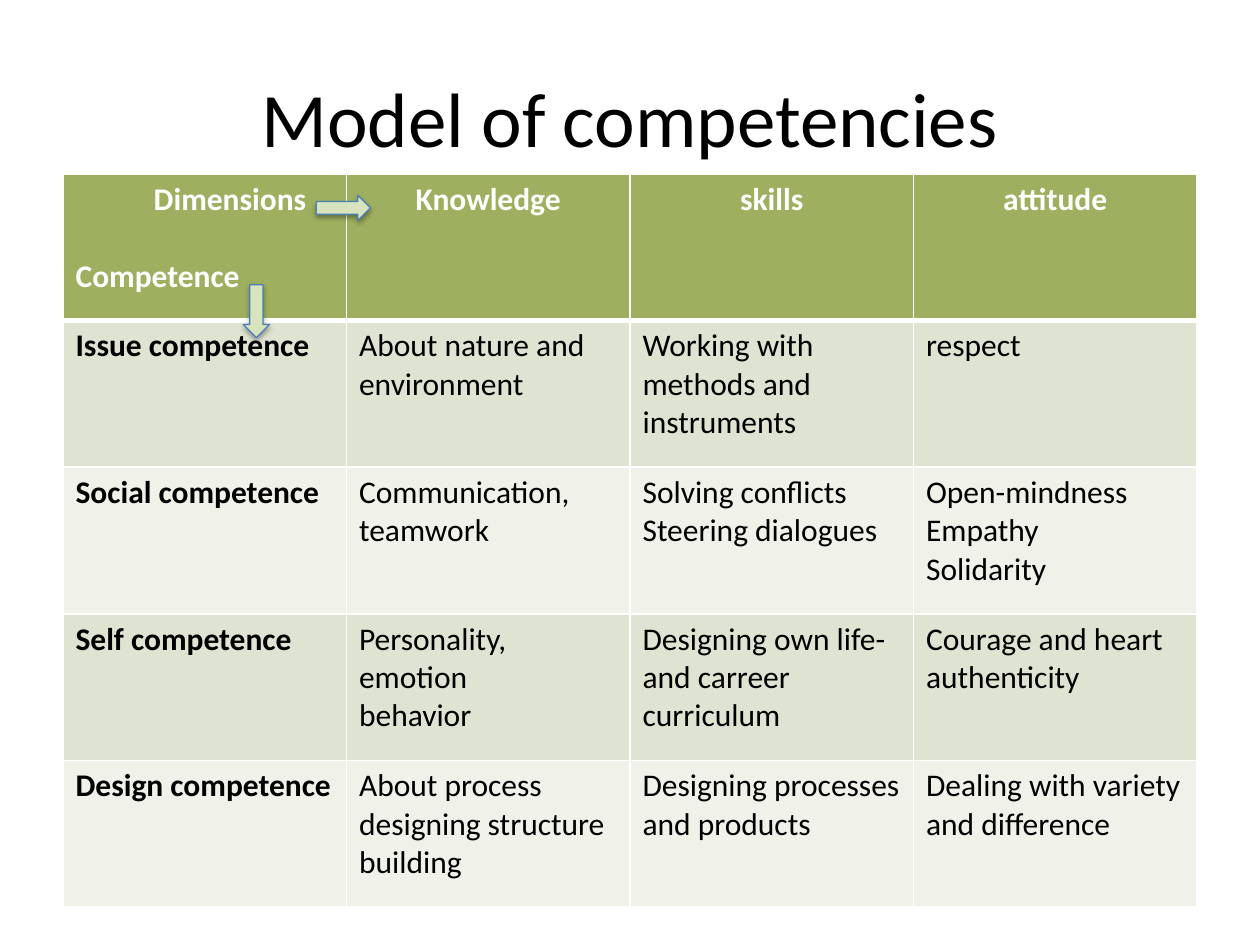
from lxml import etree
from pptx import Presentation
from pptx.dml.color import RGBColor
from pptx.enum import shapes, text
from pptx.oxml import ns
from pptx.util import Inches, Pt

FONT = "Calibri"
BLACK = RGBColor(0x00, 0x00, 0x00)
WHITE = RGBColor(0xFF, 0xFF, 0xFF)
HEADER_GREEN = RGBColor(0x9E, 0xB0, 0x60)
BAND_DARK = RGBColor(0xDF, 0xE4, 0xD2)
BAND_LIGHT = RGBColor(0xF0, 0xF2, 0xEA)
ARROW_FILL = RGBColor(0xD7, 0xE4, 0xBD)
ARROW_LINE = RGBColor(0x4B, 0x7E, 0xBC)

ROWS = [
    ["Dimensions\nCompetence", "Knowledge", "skills", "attitude"],
    ["Issue competence", "About nature and environment",
     "Working with methods and instruments", "respect"],
    ["Social competence", "Communication, teamwork",
     "Solving conflicts\nSteering dialogues",
     "Open-mindness\nEmpathy\nSolidarity"],
    ["Self competence", "Personality, emotion\nbehavior",
     "Designing own life- and carreer curriculum",
     "Courage and heart\nauthenticity"],
    ["Design competence", "About process designing structure building",
     "Designing processes and products",
     "Dealing with variety and difference"],
]


def add_node(parent, tag, **attributes):
    values = {name: str(value) for name, value in attributes.items()}
    return etree.SubElement(parent, ns.qn(tag), values)


def style_paragraph(para, size, color, bold=False, align=text.PP_ALIGN.LEFT):
    para.alignment = align
    para.font.name = FONT
    para.font.size = Pt(size)
    para.font.bold = bold
    para.font.color.rgb = color


def set_borders(cell, widths):
    properties = cell._tc.get_or_add_tcPr()
    for side, width in zip("LRTB", widths):
        line = add_node(properties, f"a:ln{side}", w=Pt(width))
        fill = add_node(line, "a:solidFill")
        add_node(fill, "a:srgbClr", val=WHITE)


def add_title(page, left, top, width, height):
    box = page.shapes.add_textbox(left, top, width, height)
    frame = box.text_frame
    frame.word_wrap = True
    frame.vertical_anchor = text.MSO_ANCHOR.MIDDLE
    frame.text = "Model of competencies"
    style_paragraph(frame.paragraphs[0], 44, BLACK, align=text.PP_ALIGN.CENTER)


def fill_cell(cell, wording, row, column):
    header = row == 0
    set_borders(cell, (1, 1, 3 if row == 1 else 1, 3 if header else 1))
    cell.fill.solid()
    band = BAND_DARK if row % 2 else BAND_LIGHT
    cell.fill.fore_color.rgb = HEADER_GREEN if header else band
    cell.text = wording
    centred = header and column > 0
    align = text.PP_ALIGN.CENTER if centred else text.PP_ALIGN.LEFT
    for para in cell.text_frame.paragraphs:
        style_paragraph(para, 18, WHITE if header else BLACK,
                        header or column == 0, align)


def add_competence_table(page, left, top, width, height):
    frame = page.shapes.add_table(len(ROWS), len(ROWS[0]),
                                  left, top, width, height)
    table = frame.table
    for row, wordings in enumerate(ROWS):
        for column, wording in enumerate(wordings):
            fill_cell(table.cell(row, column), wording, row, column)
    dimensions, competence = table.cell(0, 0).text_frame.paragraphs
    dimensions._p.get_or_add_pPr().set("marL", str(Inches(0.62)))
    competence.space_before = Pt(22)

    add_arrow(page, shapes.MSO_SHAPE.RIGHT_ARROW, left + Inches(2.01),
              top + Inches(0.17), Inches(0.43), Inches(0.2))
    add_arrow(page, shapes.MSO_SHAPE.DOWN_ARROW, left + Inches(1.43),
              top + Inches(0.88), Inches(0.21), Inches(0.42))


def add_arrow(page, kind, left, top, width, height):
    arrow = page.shapes.add_shape(kind, left, top, width, height)
    arrow.fill.solid()
    arrow.fill.fore_color.rgb = ARROW_FILL
    arrow.line.color.rgb = ARROW_LINE
    arrow.line.width = Pt(0.75)
    arrow.shadow.inherit = False
    effects = arrow._element.spPr.find(ns.qn("a:effectLst"))
    shadow = add_node(effects, "a:outerShdw", blurRad=Pt(3.1), dist=Pt(1.8),
                      dir=90 * 60000, rotWithShape=0)
    color = add_node(shadow, "a:srgbClr", val=BLACK)
    add_node(color, "a:alpha", val=35000)


def main():
    deck = Presentation()
    deck.slide_width, deck.slide_height = Inches(10), Inches(7.5)
    page = deck.slides.add_slide(deck.slide_layouts[6])
    add_title(page, Inches(0.5), Inches(0.3), Inches(9), Inches(1.25))
    add_competence_table(page, Inches(0.5), Inches(1.38), Inches(9), Inches(5.82))
    deck.save("out.pptx")


if __name__ == "__main__":
    main()
